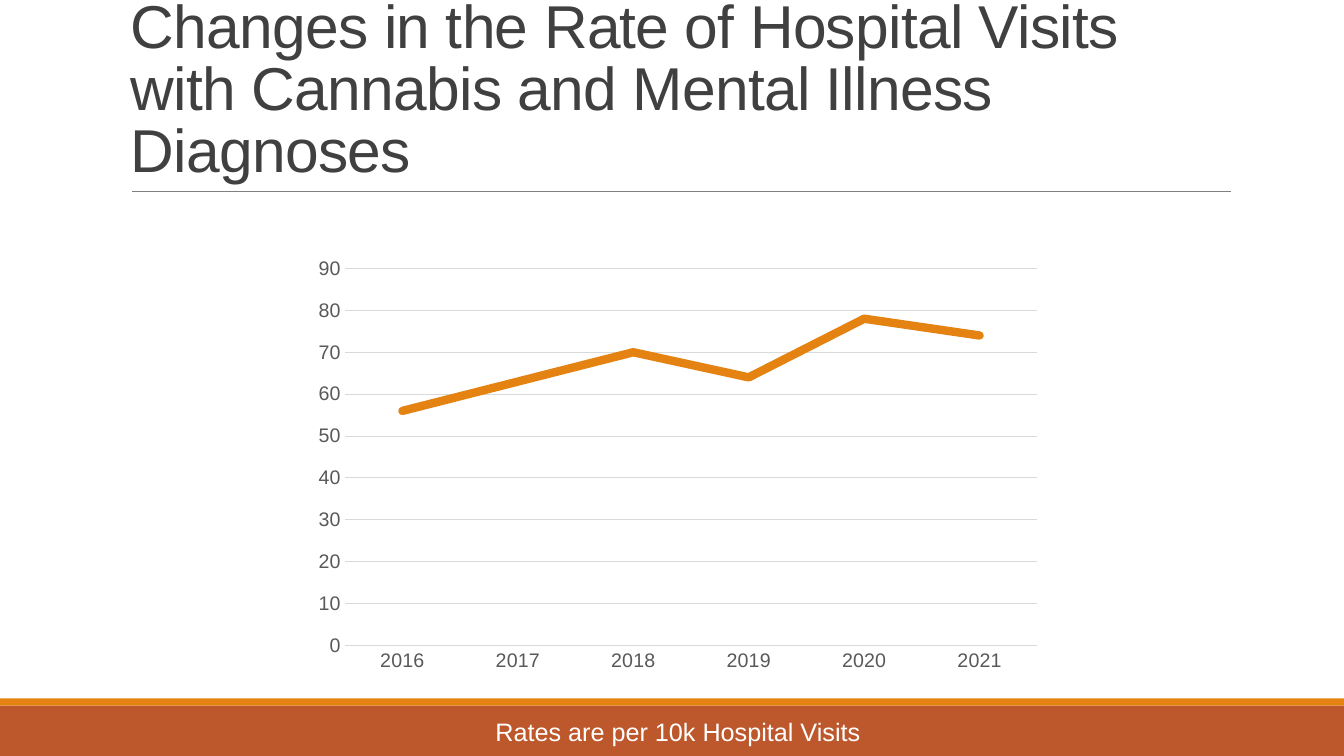
from dataclasses import dataclass

from lxml.etree import SubElement
from pptx import Presentation
from pptx.chart.data import CategoryChartData
from pptx.dml.color import RGBColor as RGB
from pptx.enum.chart import XL_CHART_TYPE as ChartType, XL_TICK_MARK as Tick
from pptx.enum.shapes import MSO_CONNECTOR as Connector, MSO_SHAPE as Shape
from pptx.enum.text import MSO_ANCHOR as Anchor, PP_ALIGN as Align
from pptx.oxml.ns import qn
from pptx.util import Cm, Pt

# Content
TITLE = "Changes in the Rate of Hospital Visits with Cannabis and Mental Illness Diagnoses"
FOOTNOTE = "Rates are per 10k Hospital Visits"
SERIES_NAME = "Series 1"
VISIT_RATES = {"2016": 56, "2017": 63, "2018": 70, "2019": 64, "2020": 78, "2021": 74}


@dataclass(frozen=True)
class Theme:
    font: str = "Arial"
    title_color: RGB = RGB(0x40, 0x40, 0x40)
    axis_color: RGB = RGB(0x59, 0x59, 0x59)
    grid_color: RGB = RGB(0xD9, 0xD9, 0xD9)
    rule_color: RGB = RGB(0x80, 0x80, 0x80)
    accent: RGB = RGB(0xE4, 0x83, 0x12)
    footer_fill: RGB = RGB(0xBD, 0x58, 0x2C)
    footer_text: RGB = RGB(0xFF, 0xFF, 0xFF)
    title_size: Pt = Pt(43.2)
    axis_size: Pt = Pt(14)
    footer_size: Pt = Pt(18)
    thin_line: Pt = Pt(0.75)


THEME = Theme()

# Layout
SLIDE_W, SLIDE_H = Cm(33.87), Cm(19.05)
FOOTER_TOP, STRIPE_H = Cm(17.78), Cm(0.18)
RULE_LEFT, RULE_RIGHT, RULE_Y = Cm(3.33), Cm(31.01), Cm(4.83)
TITLE_BOX = Cm(3.05), Cm(0.74), Cm(27.94), Cm(4.04)
CHART_LEFT, CHART_W = Cm(7.65), Cm(18.87)
CHART_TOP, CHART_H = Cm(6.27), Cm(10.87)
FOOTNOTE_TOP = Cm(17.83)


def style_font(font, size, color):
    font.name, font.size = THEME.font, size
    font.color.rgb = color


def add_band(slide, top, height, color):
    band = slide.shapes.add_shape(Shape.RECTANGLE, 0, top, SLIDE_W, height)
    band.shadow.inherit = False
    band.fill.solid()
    band.fill.fore_color.rgb = color
    band.line.fill.background()


def add_text(slide, text, box, anchor, align, size, color):
    frame = slide.shapes.add_textbox(*box).text_frame
    frame.word_wrap = True
    frame.vertical_anchor = anchor
    frame.text = text
    paragraph = frame.paragraphs[0]
    paragraph.alignment = align
    style_font(paragraph.runs[0].font, size, color)
    return paragraph


def add_rate_chart(slide):
    data = CategoryChartData()
    data.categories = list(VISIT_RATES)
    data.add_series(SERIES_NAME, list(VISIT_RATES.values()))
    chart = slide.shapes.add_chart(
        ChartType.LINE, CHART_LEFT, CHART_TOP, CHART_W, CHART_H, data).chart
    chart.has_legend = chart.has_title = False
    style_font(chart.font, THEME.axis_size, THEME.axis_color)

    # Axes and gridlines
    years, rates = chart.category_axis, chart.value_axis
    for axis in (years, rates):
        axis.major_tick_mark = axis.minor_tick_mark = Tick.NONE
        style_font(axis.tick_labels.font, THEME.axis_size, THEME.axis_color)
    rates.minimum_scale, rates.maximum_scale, rates.major_unit = 0, 90, 10
    rates.format.line.fill.background()
    for line in (years.format.line, rates.major_gridlines.format.line):
        line.color.rgb = THEME.grid_color
        line.width = THEME.thin_line

    # Rate line with round ends
    plot = chart.plots[0]
    plot.vary_by_categories = False
    rate_line = plot.series[0]
    rate_line.smooth = False
    rate_line.format.line.color.rgb = THEME.accent
    rate_line.format.line.width = Pt(6)
    outline = rate_line.format.line._get_or_add_ln()
    outline.set("cap", "rnd")
    SubElement(outline, qn("a:round"))


def main():
    deck = Presentation()
    deck.slide_width, deck.slide_height = SLIDE_W, SLIDE_H
    slide = deck.slides.add_slide(deck.slide_layouts[6])

    # Footer bands
    add_band(slide, FOOTER_TOP, SLIDE_H - FOOTER_TOP, THEME.footer_fill)
    add_band(slide, FOOTER_TOP - STRIPE_H, STRIPE_H, THEME.accent)

    # Title and the rule below it
    rule = slide.shapes.add_connector(
        Connector.STRAIGHT, RULE_LEFT, RULE_Y, RULE_RIGHT, RULE_Y)
    rule.line.color.rgb = THEME.rule_color
    rule.line.width = Pt(0.5)
    SubElement(rule._element.spPr, qn("a:effectLst"))
    title = add_text(slide, TITLE, TITLE_BOX, Anchor.BOTTOM, Align.LEFT,
                     THEME.title_size, THEME.title_color)
    title.line_spacing = 0.85
    title.runs[0].font._element.set("spc", "-50")

    # Chart and footnote
    add_rate_chart(slide)
    footnote_box = CHART_LEFT, FOOTNOTE_TOP, CHART_W, SLIDE_H - FOOTNOTE_TOP
    add_text(slide, FOOTNOTE, footnote_box, Anchor.MIDDLE, Align.CENTER,
             THEME.footer_size, THEME.footer_text)

    deck.save("out.pptx")


if __name__ == "__main__":
    main()
